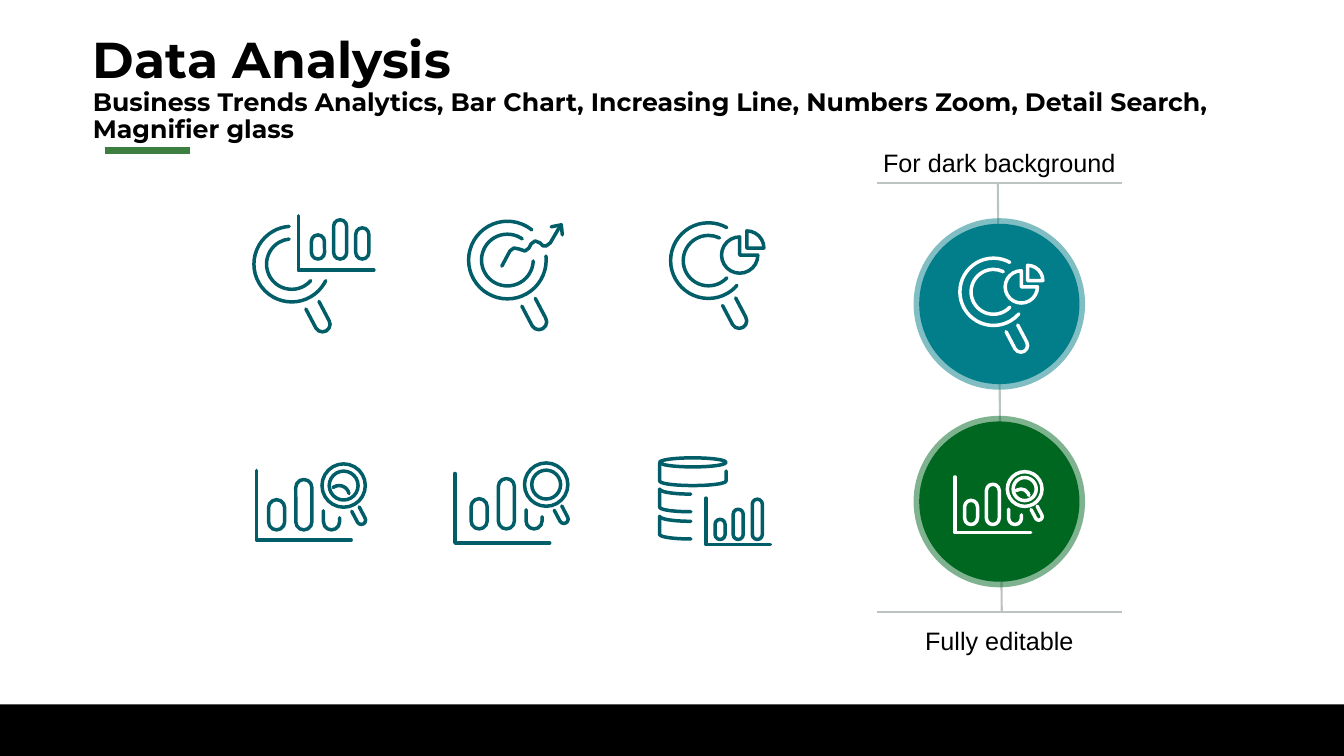
from dataclasses import dataclass
from math import ceil, cos, floor, radians, sin

from lxml.etree import Element, SubElement
from pptx import Presentation
from pptx.dml.color import RGBColor
from pptx.enum.shapes import MSO_CONNECTOR, MSO_SHAPE
from pptx.enum.text import MSO_ANCHOR, MSO_AUTO_SIZE, PP_ALIGN
from pptx.oxml.ns import qn
from pptx.util import Cm, Pt

BLACK = RGBColor(0x00, 0x00, 0x00)
WHITE = RGBColor(0xFF, 0xFF, 0xFF)
PETROL = RGBColor(0x01, 0x5E, 0x68)
TEAL = RGBColor(0x02, 0x7E, 0x8A)
GREEN = RGBColor(0x00, 0x67, 0x21)
ACCENT_GREEN = RGBColor(0x3D, 0x7E, 0x41)
GREY = RGBColor(0xBC, 0xC4, 0xC0)

ICON_UNIT = 0.0254
PRECISION = 100


@dataclass
class Box:
    left: float
    top: float
    width: float
    height: float

    @property
    def center_x(self):
        return self.left + self.width / 2


@dataclass
class Icon:
    width: float
    height: float
    strokes: list


def arc(center_x, center_y, radius, start, end, radius_y=None):
    radius_y = radius_y or radius
    low, high = min(start, end), max(start, end)
    quarters = [90 * turn for turn in range(floor(low / 90) + 1, ceil(high / 90))]
    angles = sorted([start, end] + quarters, reverse=start > end)
    points = [(center_x + radius * cos(radians(angle)), center_y + radius_y * sin(radians(angle)))
              for angle in angles]
    curves = [point + (radius, radius_y, first, last - first)
              for point, first, last in zip(points[1:], angles, angles[1:])]
    return points[:1] + curves


def capsule(left, top, width, bottom):
    radius = width / 2
    middle = left + radius
    points = arc(middle, top + radius, radius, 180, 360) + arc(middle, bottom - radius, radius, 0, 180)
    return points, True


def axes(left, top, right, bottom):
    return [(left, top), (left, bottom), (right, bottom)], False


def magnifier(center_x, center_y, radius, outer=(0, 360), inner=(0, 360)):
    zoom = radius / 37.5
    handle_start = (center_x + 14 * zoom, center_y + 44.5 * zoom)
    handle_end = (center_x + 27 * zoom, center_y + 37 * zoom)
    handle_cap = arc(center_x + 30.5 * zoom, center_y + 59.75 * zoom, 7.5 * zoom, 150, -30)
    return [
        (arc(center_x, center_y, radius, *outer), False),
        (arc(center_x, center_y, radius * 2 / 3, *inner), False),
        ([handle_start] + handle_cap + [handle_end], False),
    ]


def bar_search(bar_left, bar_bottom, axis_top, axis_bottom):
    hook_left = bar_left + 54.5
    hook_y = bar_bottom - 8
    hook = [(hook_left, hook_y - 11)] + arc(hook_left + 8, hook_y, 8, 180, 0) + [(hook_left + 16, hook_y - 4)]
    return [
        axes(0, axis_top, 94, axis_bottom),
        capsule(bar_left, bar_bottom - 30, 16, bar_bottom),
        capsule(bar_left + 27, bar_bottom - 50, 16, bar_bottom),
        (hook, False),
    ] + magnifier(bar_left + 74.5, bar_bottom - 44, 21.5)


def database_layer(top):
    return arc(31, top, 31, 90, 180, 5) + arc(31, top + 18, 31, 180, 90, 4.5), False


CHART_ZOOM = Icon(123, 116, magnifier(41.5, 48, 37.5, (26, 266), (41, 264))
                  + [axes(48, 0, 123, 54)]
                  + [capsule(left, top, 13, 43) for left, top in ((61, 19), (83, 4), (105, 12))])
TREND_LINE = [(37, 49), (45, 34), (49, 31), (54, 32), (60, 34), (64, 31), (66, 27),
              (70, 24), (75, 26), (78, 29), (81, 29), (85, 26), (95, 9)]
TREND_ZOOM = Icon(97, 114, magnifier(42.5, 43, 38.5, (-6, -51 - 360)[:1] + (309,), (2, 305))
                  + [(TREND_LINE, False), ([(86, 10), (96, 8), (97, 18)], False)])
PIE_ZOOM = Icon(97, 108, magnifier(42, 40.5, 37.5, (41, 299), (43, 296))
                + [([(73, 35)] + arc(73, 35, 18, 0, 270), True),
                   ([(80, 28)] + arc(80, 28, 17, 270, 360), True)])
BAR_DETAIL = Icon(110, 77, bar_search(12, 67, 8, 77) + [(arc(82, 33, 10, -12, -127), False)])
BAR_ZOOM = Icon(116, 83, bar_search(16, 69, 14, 83))
DATABASE = Icon(110, 86, [
    (arc(33, 4.5, 33, 0, 360, 4.5), True),
    ([(0, 5)] + arc(33, 23, 33, 180, 0, 4.5) + [(66, 13)], False),
    database_layer(31),
    database_layer(58),
    axes(46, 40, 110, 86),
] + [capsule(left, top, 10, 81) for left, top in ((55, 61), (73, 51), (92, 41))])


def round_corners(shape, icon):
    points = [point for stroke, closed in icon.strokes for point in stroke[1:]]
    segments = list(shape._element.iter(qn("a:lnTo")))
    for segment, point in zip(segments, points):
        if len(point) > 2:
            radius_x, radius_y, start, sweep = point[2:]
            curve = Element(qn("a:arcTo"), wR=str(round(radius_x * PRECISION)),
                            hR=str(round(radius_y * PRECISION)),
                            stAng=str(round(start % 360 * 60000)), swAng=str(round(sweep * 60000)))
            segment.getparent().replace(segment, curve)


def add_icon(slide, icon, center_x, center_y, color, zoom=1):
    unit = ICON_UNIT * zoom
    builder = None
    for points, closed in icon.strokes:
        scaled = [(point[0] * PRECISION, point[1] * PRECISION) for point in points]
        if builder is None:
            builder = slide.shapes.build_freeform(*scaled[0], scale=Cm(1) * unit / PRECISION)
        else:
            builder.move_to(*scaled[0])
        builder.add_line_segments(scaled[1:], close=closed)
    shape = builder.convert_to_shape(Cm(center_x - icon.width * unit / 2),
                                     Cm(center_y - icon.height * unit / 2))
    round_corners(shape, icon)
    shape.shadow.inherit = False
    shape.fill.background()
    shape.line.color.rgb = color
    shape.line.width = Pt(2.5)
    outline = shape.line._get_or_add_ln()
    outline.set("cap", "rnd")
    SubElement(outline, qn("a:round"))


def add_line(slide, start, end, color, width):
    line = slide.shapes.add_connector(MSO_CONNECTOR.STRAIGHT, *map(Cm, start + end))
    line.line.color.rgb = color
    line.line.width = Pt(width)
    SubElement(line._element.spPr, qn("a:effectLst"))


def add_caption(slide, box, text):
    caption = slide.shapes.add_textbox(Cm(box.left), Cm(box.top), Cm(box.width), Cm(box.height))
    frame = caption.text_frame
    frame.word_wrap = True
    frame.auto_size = MSO_AUTO_SIZE.SHAPE_TO_FIT_TEXT
    frame.text = text
    paragraph = frame.paragraphs[0]
    paragraph.alignment = PP_ALIGN.CENTER
    paragraph.font.name = "Arial"
    paragraph.font.size = Pt(18)
    paragraph.font.color.rgb = BLACK


def add_filled_shape(slide, kind, box, color):
    shape = slide.shapes.add_shape(kind, Cm(box.left), Cm(box.top), Cm(box.width), Cm(box.height))
    shape.shadow.inherit = False
    shape.fill.solid()
    shape.fill.fore_color.rgb = color
    shape.line.fill.background()
    return shape


def add_disc(slide, box, color, icon, zoom):
    disc = add_filled_shape(slide, MSO_SHAPE.OVAL, box, color)
    disc.line.color.rgb = color
    disc.line.width = Pt(8)
    line_color = disc.line._get_or_add_ln().find(".//" + qn("a:srgbClr"))
    SubElement(line_color, qn("a:alpha"), val="50000")
    add_icon(slide, icon, box.center_x, box.top + box.height / 2, WHITE, zoom)


def add_header(slide, box):
    title = slide.shapes.title
    title.left, title.top, title.width, title.height = map(Cm, (box.left, box.top, box.width, box.height))
    frame = title.text_frame
    frame.margin_left = frame.margin_top = frame.margin_right = frame.margin_bottom = 0
    frame.vertical_anchor = MSO_ANCHOR.MIDDLE
    frame.auto_size = MSO_AUTO_SIZE.NONE
    frame.word_wrap = True
    frame.text = ("Data Analysis\vBusiness Trends Analytics, Bar Chart, Increasing Line, "
                  "Numbers Zoom, Detail Search, Magnifier glass")
    paragraph = frame.paragraphs[0]
    paragraph.alignment = PP_ALIGN.LEFT
    paragraph.line_spacing = 0.9
    for run, size in zip(paragraph.runs, (36, 18)):
        run.font.name = "Montserrat"
        run.font.size = Pt(size)
        run.font.bold = True
        run.font.color.rgb = BLACK
    rule_y = box.top + 2.76
    add_line(slide, (box.left + 0.3, rule_y), (box.left + 2.44, rule_y), ACCENT_GREEN, 5)


def add_icon_grid(slide, box):
    rows = ((CHART_ZOOM, TREND_ZOOM, PIE_ZOOM), (BAR_DETAIL, BAR_ZOOM, DATABASE))
    cell_height = box.height / len(rows)
    for row, icons in enumerate(rows):
        cell_width = box.width / len(icons)
        for column, icon in enumerate(icons):
            add_icon(slide, icon, box.left + (column + 0.5) * cell_width,
                     box.top + (row + 0.5) * cell_height, PETROL)


def add_dark_panel(slide, box):
    center = box.center_x
    upper, lower = box.top + 1.04, box.top + 11.84
    add_line(slide, (center - 0.04, upper), (center + 0.06, lower), GREY, 1.5)
    for rule_y in (upper, lower):
        add_line(slide, (box.left, rule_y), (box.left + box.width, rule_y), GREY, 1.5)
    add_caption(slide, Box(center - 3.19, box.top, 6.38, 1.04), "For dark background")
    add_caption(slide, Box(center - 4, box.top + 12.04, 8, 1.02), "Fully editable")
    diameter = 4.04
    discs = ((2.06, TEAL, PIE_ZOOM, 0.89), (7.04, GREEN, BAR_DETAIL, 0.8))
    for offset, color, icon, zoom in discs:
        disc_box = Box(center - diameter / 2, box.top + offset, diameter, diameter)
        add_disc(slide, disc_box, color, icon, zoom)


def main():
    presentation = Presentation()
    presentation.slide_width = Cm(33.87)
    presentation.slide_height = Cm(19.05)
    slide = presentation.slides.add_slide(presentation.slide_layouts[5])
    add_filled_shape(slide, MSO_SHAPE.RECTANGLE, Box(0, 17.75, 33.87, 1.3), BLACK)
    add_header(slide, Box(2.34, 1.02, 29.21, 2.49))
    add_icon_grid(slide, Box(5.32, 4.05, 15.24, 11.44))
    add_dark_panel(slide, Box(22.1, 3.58, 6.17, 13.06))
    presentation.save("out.pptx")


if __name__ == "__main__":
    main()
